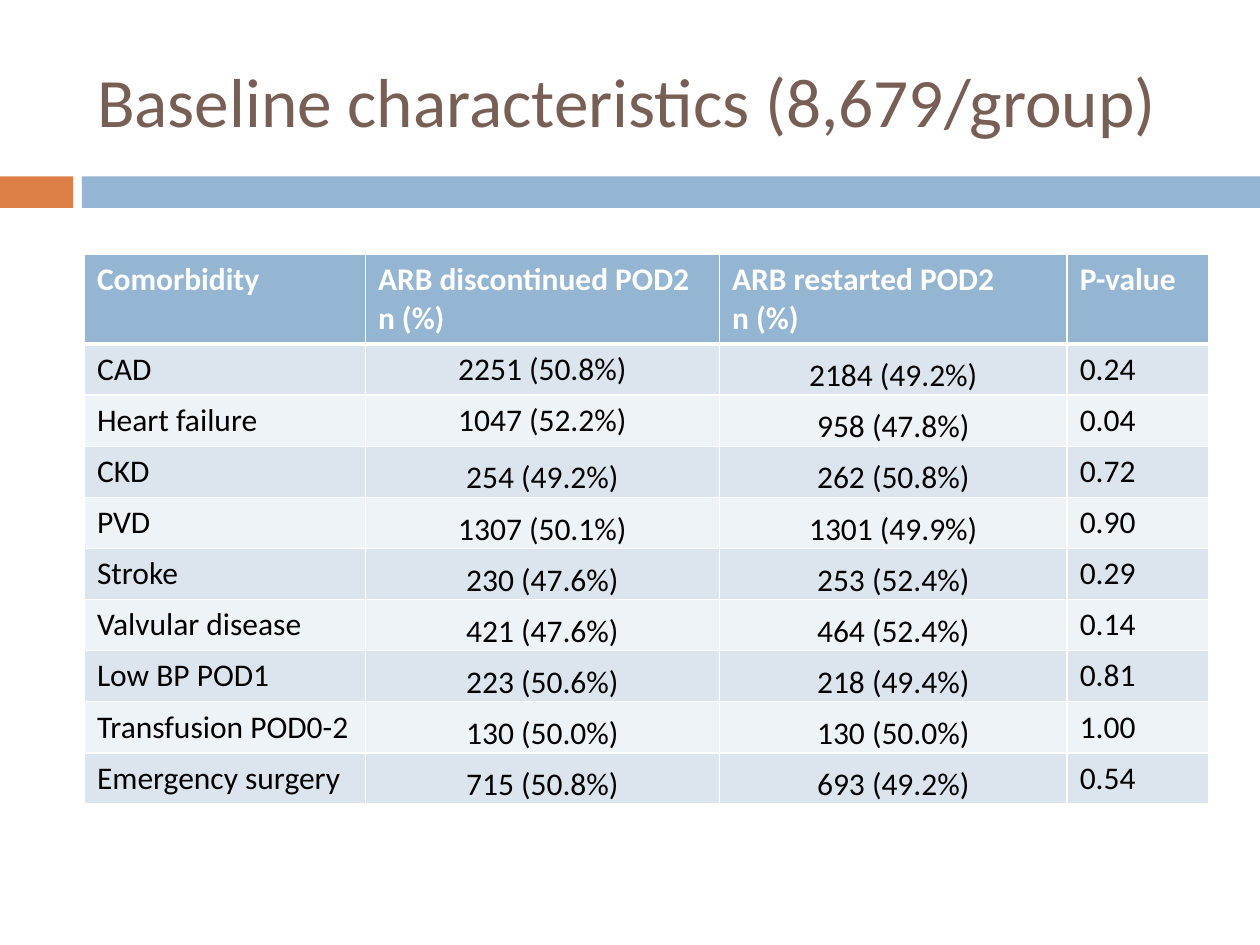
from dataclasses import dataclass
from lxml.etree import SubElement
from pptx import Presentation
from pptx.dml.color import RGBColor as Rgb
from pptx.enum.shapes import MSO_SHAPE as Shape
from pptx.enum.text import MSO_ANCHOR as Anchor, PP_ALIGN as Align
from pptx.oxml.ns import qn
from pptx.util import Inches, Pt


@dataclass(frozen=True)
class Theme:
    font: str = "Calibri"
    title: str = "775F55"
    accent: str = "DD8047"
    blue: str = "94B6D2"
    bands: tuple = ("DCE5EE", "EEF3F7")
    white: str = "FFFFFF"
    black: str = "000000"
    large: float = 39.6
    small: float = 18


THEME = Theme()
WIDTHS = (2.23, 2.81, 2.76, 1.12)
HEAD = ("Comorbidity", "ARB discontinued POD2\nn (%)",
        "ARB restarted POD2\nn (%)", "P-value")
ROWS = (
    ("CAD", "2251 (50.8%)", "2184 (49.2%)", "0.24"),
    ("Heart failure", "1047 (52.2%)", "958 (47.8%)", "0.04"),
    ("CKD", "254 (49.2%)", "262 (50.8%)", "0.72"),
    ("PVD", "1307 (50.1%)", "1301 (49.9%)", "0.90"),
    ("Stroke", "230 (47.6%)", "253 (52.4%)", "0.29"),
    ("Valvular disease", "421 (47.6%)", "464 (52.4%)", "0.14"),
    ("Low BP POD1", "223 (50.6%)", "218 (49.4%)", "0.81"),
    ("Transfusion POD0-2", "130 (50.0%)", "130 (50.0%)", "1.00"),
    ("Emergency surgery", "715 (50.8%)", "693 (49.2%)", "0.54"),
)


def write(frame, text, size, color, bold=False, align=Align.LEFT):
    frame.text = text
    for para in frame.paragraphs:
        para.alignment = align
        for run in para.runs:
            font = run.font
            font.name, font.size, font.bold = THEME.font, Pt(size), bold
            font.color.rgb = Rgb.from_string(color)


def add_bar(slide, left, width, color):
    bar = slide.shapes.add_shape(Shape.RECTANGLE, Inches(left), Inches(1.4),
                                 Inches(width), Inches(0.25))
    bar.shadow.inherit = False
    bar.fill.solid()
    bar.fill.fore_color.rgb = Rgb.from_string(color)
    bar.line.fill.background()


def set_title(slide, text):
    title = slide.shapes.title
    title.left, title.top = Inches(0.67), Inches(0.25)
    title.width, title.height = Inches(8.92), Inches(1.08)
    title.text_frame.vertical_anchor = Anchor.MIDDLE
    write(title.text_frame, text, THEME.large, THEME.title)


def set_edges(cell, top, bottom):
    props = cell._tc.get_or_add_tcPr()
    for side, width in (("L", 1), ("R", 1), ("T", top), ("B", bottom)):
        line = SubElement(props, qn(f"a:ln{side}"), w=str(Pt(width)))
        fill = SubElement(line, qn("a:solidFill"))
        SubElement(fill, qn("a:srgbClr"), val=THEME.white)


def set_fill(cell, color):
    cell.fill.solid()
    cell.fill.fore_color.rgb = Rgb.from_string(color)


def sink(cell):
    cell.vertical_anchor = Anchor.BOTTOM
    cell.margin_left = cell.margin_right = cell.margin_top = Inches(0.01)
    cell.margin_bottom = 0


def fill_head(table):
    for col, text in enumerate(HEAD):
        cell = table.cell(0, col)
        set_edges(cell, 1, 3)
        set_fill(cell, THEME.blue)
        write(cell.text_frame, text, THEME.small, THEME.white, bold=True)


def fill_body(table):
    for row, values in enumerate(ROWS, 1):
        for col, text in enumerate(values):
            cell = table.cell(row, col)
            set_edges(cell, 3 if row == 1 else 1, 1)
            set_fill(cell, THEME.bands[(row - 1) % 2])
            count = col in (1, 2)
            write(cell.text_frame, text, THEME.small, THEME.black,
                  align=Align.CENTER if count else Align.LEFT)
            if col == 2 or (col == 1 and row > 2):
                sink(cell)


def add_grid(slide):
    frame = slide.shapes.add_table(len(ROWS) + 1, len(HEAD), Inches(0.67),
                                   Inches(2.02), Inches(8.92), Inches(4.35))
    table = frame.table
    for col, width in zip(table.columns, WIDTHS):
        col.width = Inches(width)
    for num, row in enumerate(table.rows):
        row.height = Inches(0.4 if num else 0.69)
    fill_head(table)
    fill_body(table)


def main():
    deck = Presentation()
    deck.slide_width, deck.slide_height = Inches(10), Inches(7.5)
    slide = deck.slides.add_slide(deck.slide_layouts[5])
    add_bar(slide, 0, 0.58, THEME.accent)
    add_bar(slide, 0.65, 9.35, THEME.blue)
    set_title(slide, "Baseline characteristics (8,679/group)")
    add_grid(slide)
    deck.save("out.pptx")


if __name__ == "__main__":
    main()
